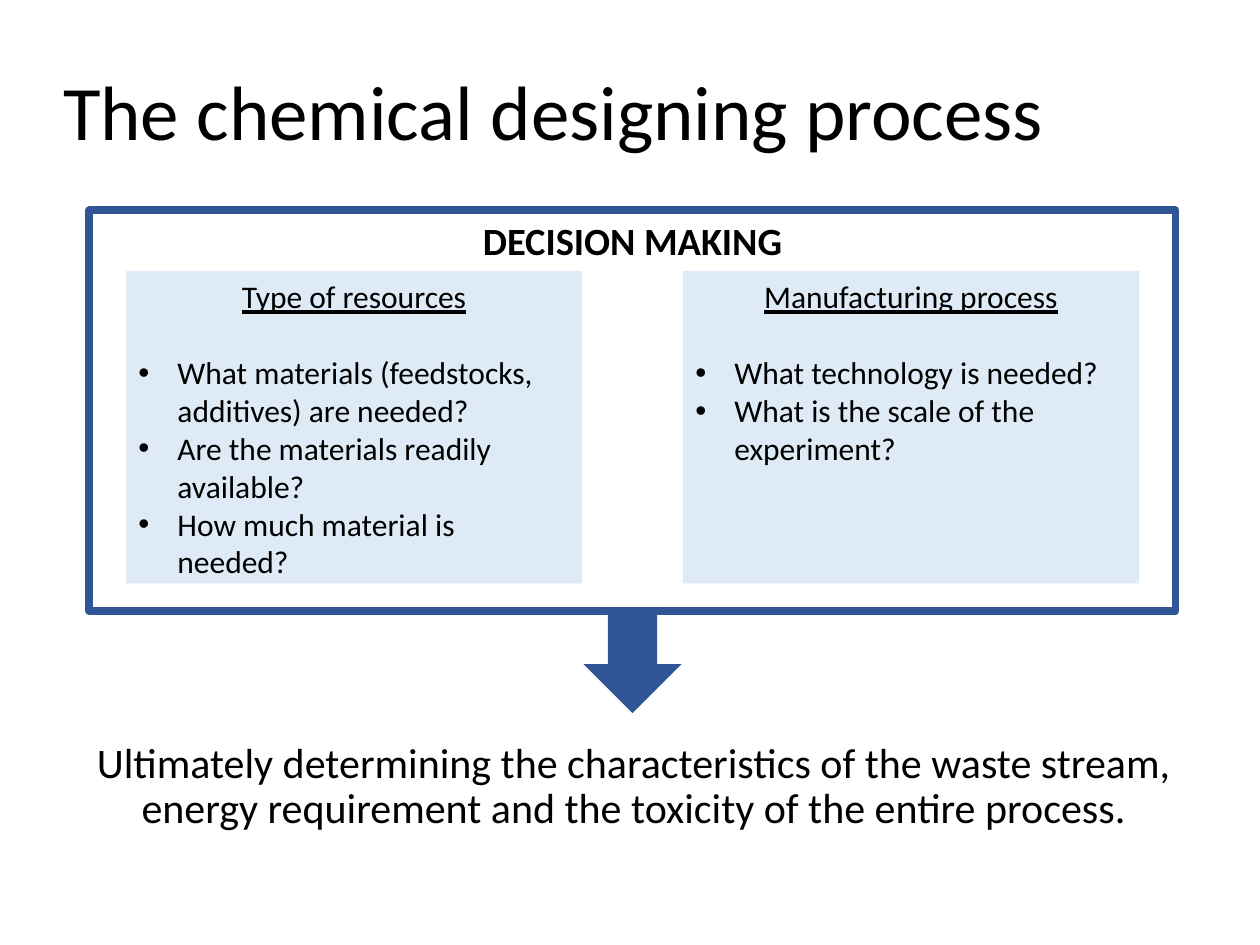
from dataclasses import dataclass

from lxml.etree import SubElement
from pptx import Presentation
from pptx.dml.color import RGBColor
from pptx.enum.shapes import MSO_SHAPE as Shape
from pptx.enum.text import MSO_ANCHOR as Anchor, MSO_AUTO_SIZE as AutoSize, PP_ALIGN as Align
from pptx.oxml.ns import qn
from pptx.util import Inches, Pt


@dataclass(frozen=True)
class Theme:
    font: str = "Calibri"
    ink: str = "000000"
    paper: str = "FFFFFF"
    accent: str = "2F5597"
    tint: str = "DEEBF7"
    title: int = 44
    body: int = 24
    heading: int = 22
    text: int = 18
    border: float = 4.5


THEME = Theme()
COLUMNS = [
    ("Type of resources", [
        "What materials (feedstocks, additives) are needed?",
        "Are the materials readily available?",
        "How much material is needed?",
    ]),
    ("Manufacturing process", [
        "What technology is needed?",
        "What is the scale of the experiment?",
    ]),
]


def set_indent(para, left, hanging=0, bullet=None):
    properties = para._p.get_or_add_pPr()
    properties.set("marL", str(Inches(left)))
    properties.set("indent", str(-Inches(hanging)))
    if bullet:
        SubElement(properties, qn("a:buFont")).set("typeface", "Arial")
        SubElement(properties, qn("a:buChar")).set("char", bullet)
    else:
        SubElement(properties, qn("a:buNone"))


def write(para, text, size, align=Align.LEFT, bold=False, underline=False,
          before=0, spacing=1.0):
    para.alignment = align
    para.space_before = Pt(before)
    para.line_spacing = spacing
    span = para.add_run()
    span.text = text
    font = span.font
    font.name, font.size = THEME.font, Pt(size)
    font.bold, font.underline = bold, underline
    font.color.rgb = RGBColor.from_string(THEME.ink)


def place(box, left, top, width, height):
    box.left, box.top = Inches(left), Inches(top)
    box.width, box.height = Inches(width), Inches(height)


def add_block(page, kind, left, top, width, height, fill, line=None):
    box = page.shapes.add_shape(
        kind, Inches(left), Inches(top), Inches(width), Inches(height))
    box.shadow.inherit = False
    box.fill.solid()
    box.fill.fore_color.rgb = RGBColor.from_string(fill)
    if line:
        box.line.color.rgb = RGBColor.from_string(line)
        box.line.width = Pt(THEME.border)
    else:
        box.line.fill.background()
    box.text_frame.word_wrap = True
    box.text_frame.vertical_anchor = Anchor.TOP
    return box


def fill_placeholder(box, text, size, align, anchor, indent=0):
    frame = box.text_frame
    frame.auto_size = AutoSize.NONE
    frame.vertical_anchor = anchor
    para = frame.paragraphs[0]
    set_indent(para, indent)
    write(para, text, size, align=align, spacing=0.9)


def add_column(page, left, top, width, height, heading, questions):
    frame = add_block(page, Shape.RECTANGLE, left, top, width, height, THEME.tint).text_frame
    write(frame.paragraphs[0], heading, THEME.text, align=Align.CENTER, underline=True)
    for number, question in enumerate(questions):
        para = frame.add_paragraph()
        set_indent(para, 0.31, hanging=0.31, bullet="•")
        # The first question stands one line below the heading.
        write(para, question, THEME.text, before=0 if number else 22)


def add_decision_panel(page, left, top, width, height):
    panel = add_block(page, Shape.RECTANGLE, left, top, width, height,
                      THEME.paper, line=THEME.accent)
    write(panel.text_frame.paragraphs[0], "DECISION MAKING", THEME.heading,
          align=Align.CENTER, bold=True)
    margin, column_width, gap = 0.29, 3.62, 0.8
    for number, (heading, questions) in enumerate(COLUMNS):
        add_column(page, left + margin + number * (column_width + gap), top + 0.48,
                   column_width, height - 0.7, heading, questions)


def main():
    deck = Presentation()
    deck.slide_width, deck.slide_height = Inches(10), Inches(7.5)
    page = deck.slides.add_slide(deck.slide_layouts[1])

    title, body = page.shapes.title, page.placeholders[1]
    place(title, 0, 0.19, 8.62, 1.45)
    fill_placeholder(title, "The chemical designing process", THEME.title,
                     Align.LEFT, Anchor.MIDDLE, indent=0.4)
    place(body, 0.63, 5.84, 8.8, 1.5)
    fill_placeholder(
        body,
        "Ultimately determining the characteristics of the waste stream, "
        "energy requirement and the toxicity of the entire process.",
        THEME.body, Align.CENTER, Anchor.TOP)

    add_decision_panel(page, 0.71, 1.67, 8.62, 3.18)
    add_block(page, Shape.DOWN_ARROW, 4.63, 4.87, 0.78, 0.79, THEME.accent)
    deck.save("out.pptx")


if __name__ == "__main__":
    main()
